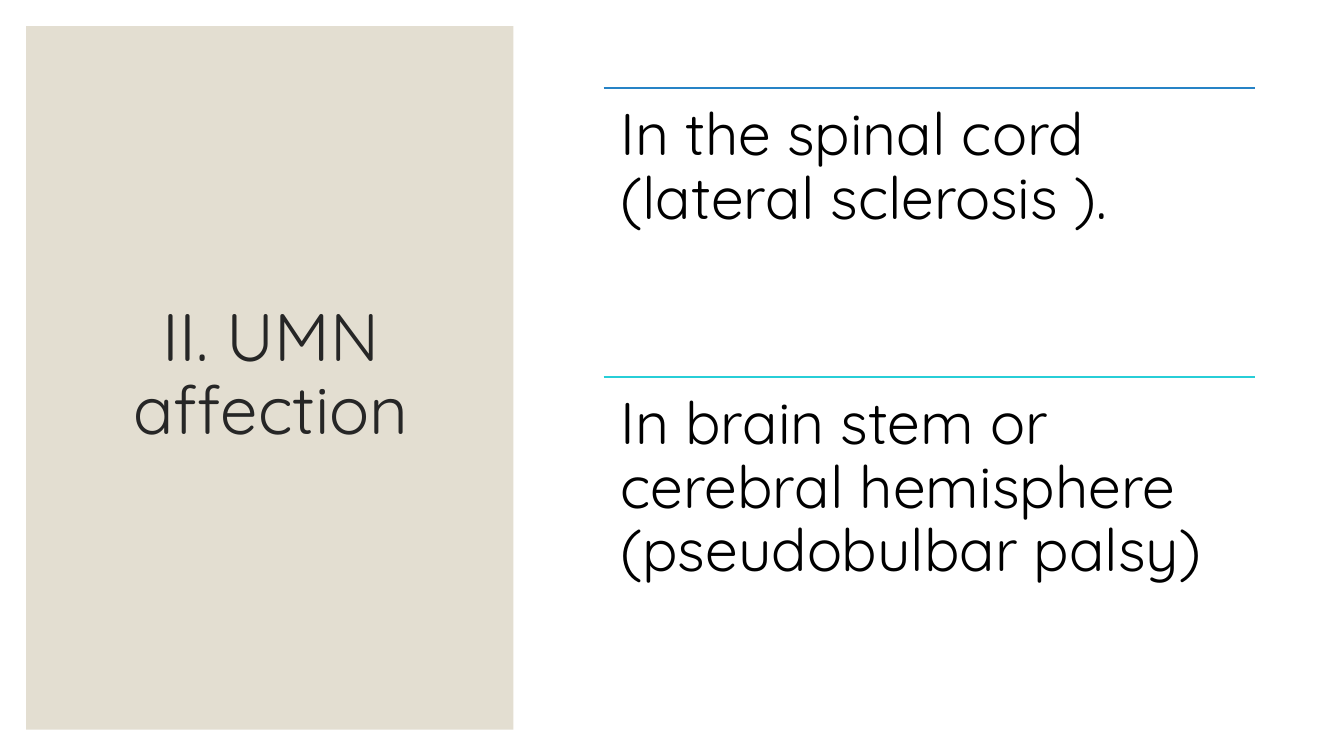
from dataclasses import dataclass

from lxml import etree
from pptx import Presentation
from pptx.dml.color import RGBColor
from pptx.enum.shapes import MSO_CONNECTOR, MSO_SHAPE
from pptx.enum.text import MSO_ANCHOR, PP_ALIGN
from pptx.oxml.ns import qn
from pptx.util import Pt

RECTANGLE = MSO_SHAPE.RECTANGLE
STRAIGHT = MSO_CONNECTOR.STRAIGHT
TOP, MIDDLE = MSO_ANCHOR.TOP, MSO_ANCHOR.MIDDLE
LEFT, CENTER = PP_ALIGN.LEFT, PP_ALIGN.CENTER

EMU_PER_PX = 9525
SLIDE_WIDTH, SLIDE_HEIGHT = 1280, 720
SITES_LEFT, SITES_TOP, SITE_WIDTH, SITE_HEIGHT = 575, 84, 620, 275
SITE_INSET = 16


@dataclass(frozen=True)
class Theme:
    font: str = "Quicksand"
    background: str = "FFFFFF"
    panel: str = "E3DED1"
    title: str = "262626"
    body: str = "000000"
    rules: tuple = ("2683C6", "27CED7")
    title_size: int = 48
    body_size: int = 42
    rule_width: int = 1
    line_spacing: float = 0.9


THEME = Theme()
LESION_SITES = (
    "In the spinal cord (lateral sclerosis ).",
    "In brain stem or cerebral hemisphere (pseudobulbar palsy)",
)


def px(*lengths):
    return [length * EMU_PER_PX for length in lengths]


def paint(fill, color):
    fill.solid()
    fill.fore_color.rgb = RGBColor.from_string(color)


def add_panel(slide, box, color):
    panel = slide.shapes.add_shape(RECTANGLE, *px(*box))
    panel.shadow.inherit = False
    paint(panel.fill, color)
    panel.line.fill.background()


def add_rule(slide, left, top, width, color):
    rule = slide.shapes.add_connector(STRAIGHT, *px(left, top, left + width, top))
    rule.line.color.rgb = RGBColor.from_string(color)
    rule.line.width = Pt(THEME.rule_width)
    etree.SubElement(rule._element.spPr, qn("a:effectLst"))


def add_text(slide, box, wording, size, color, align=LEFT, anchor=TOP, inset=8):
    frame = slide.shapes.add_textbox(*px(*box)).text_frame
    frame.word_wrap = True
    frame.vertical_anchor = anchor
    margin, = px(inset)
    frame.margin_left = frame.margin_right = margin
    frame.margin_top = frame.margin_bottom = margin
    paragraph = frame.paragraphs[0]
    paragraph.text = wording
    paragraph.alignment = align
    paragraph.line_spacing = THEME.line_spacing
    paragraph.font.name = THEME.font
    paragraph.font.size = Pt(size)
    paragraph.font.color.rgb = RGBColor.from_string(color)


def add_lesion_site(slide, top, wording, rule_color):
    """Add one entry: a coloured rule with its wording below."""
    add_rule(slide, SITES_LEFT, top, SITE_WIDTH, rule_color)
    add_text(slide, (SITES_LEFT, top, SITE_WIDTH, SITE_HEIGHT), wording,
             THEME.body_size, THEME.body, inset=SITE_INSET)


def main():
    presentation = Presentation()
    presentation.slide_width, presentation.slide_height = px(SLIDE_WIDTH, SLIDE_HEIGHT)
    slide = presentation.slides.add_slide(presentation.slide_layouts[6])
    paint(slide.background.fill, THEME.background)

    add_panel(slide, (25, 25, 464, 670), THEME.panel)
    add_text(slide, (60, 59, 396, 599), "II. UMN affection",
             THEME.title_size, THEME.title, CENTER, MIDDLE)

    for index, (wording, color) in enumerate(zip(LESION_SITES, THEME.rules)):
        add_lesion_site(slide, SITES_TOP + index * SITE_HEIGHT, wording, color)

    presentation.save("out.pptx")


if __name__ == "__main__":
    main()
